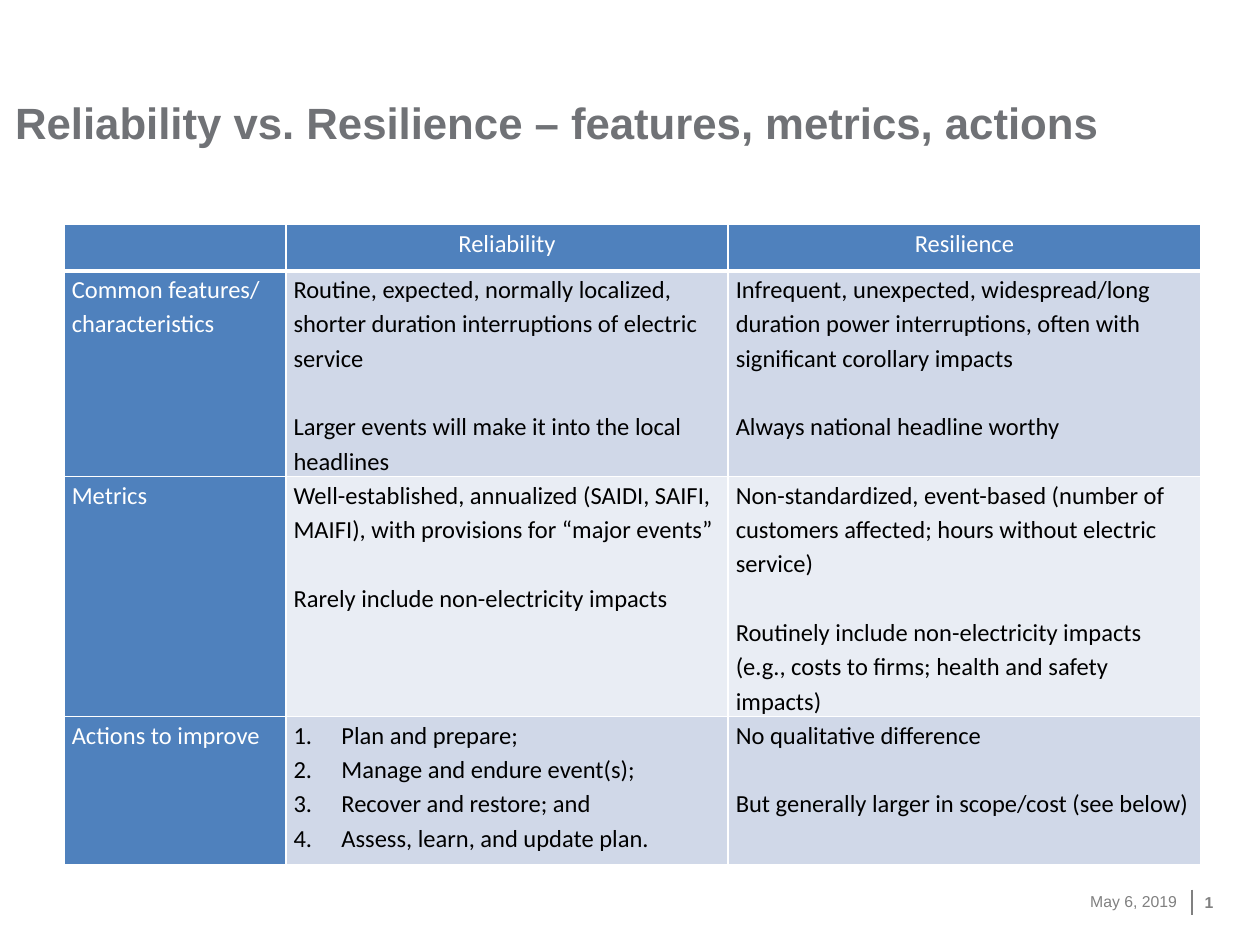
from lxml.etree import SubElement
from pptx import Presentation
from pptx.dml.color import RGBColor
from pptx.enum.shapes import MSO_CONNECTOR as Connector
from pptx.enum.text import MSO_ANCHOR as Anchor, PP_ALIGN as Align
from pptx.oxml.ns import qn
from pptx.util import Inches, Pt

COLORS = {"title": "707276", "footer": "808080", "header": "4F81BD",
          "odd": "D0D8E8", "even": "E9EDF4", "white": "FFFFFF", "black": "000000"}
TITLE = "Reliability vs. Resilience – features, metrics, actions"
DATE, NUMBER = "May 6, 2019", "1"
ROWS = [
    [[], ["Reliability"], ["Resilience"]],
    [["Common features/", "characteristics"],
     ["Routine, expected, normally localized, shorter duration interruptions of electric service",
      "Larger events will make it into the local headlines"],
     ["Infrequent, unexpected, widespread/long duration power interruptions, often with "
      "significant corollary impacts",
      "Always national headline worthy"]],
    [["Metrics"],
     ["Well-established, annualized (SAIDI, SAIFI, MAIFI), with provisions for “major events”",
      "Rarely include non-electricity impacts"],
     ["Non-standardized, event-based (number of customers affected; hours without electric service)",
      "Routinely include non-electricity impacts (e.g., costs to firms; health and safety impacts)"]],
    [["Actions to improve"],
     ["Plan and prepare;", "Manage and endure event(s);", "Recover and restore; and",
      "Assess, learn, and update plan."],
     ["No qualitative difference", "But generally larger in scope/cost (see below)"]],
]
NUMBERED_CELL = (3, 1)
COLUMN_WIDTHS = [1.76, 3.51, 3.75]
ROW_HEIGHTS = [0.37, 1.63, 1.9, 1.18]
PARAGRAPH_GAP = 19.6


def rgb(name):
    return RGBColor.from_string(COLORS[name])


def add_span(para, text, size, font, color, bold=False):
    span = para.add_run()
    span.text = text
    span.font.size, span.font.name, span.font.bold = Pt(size), font, bold
    span.font.color.rgb = rgb(color)


def set_frame(frame, anchor, right=0):
    frame.word_wrap = True
    frame.vertical_anchor = anchor
    frame.margin_left = frame.margin_top = frame.margin_bottom = 0
    frame.margin_right = Inches(right)


def add_footer(page, text, place, align, right=0, bold=False):
    box = page.shapes.add_textbox(*map(Inches, place))
    set_frame(box.text_frame, Anchor.MIDDLE, right)
    para = box.text_frame.paragraphs[0]
    para.alignment = align
    add_span(para, text, 9, "Arial", "footer", bold)


def set_borders(cell, bottom):
    props = cell._tc.get_or_add_tcPr()
    for side, width in (("L", 1), ("R", 1), ("T", 1), ("B", bottom)):
        line = SubElement(props, qn(f"a:ln{side}"), w=str(Pt(width)))
        SubElement(SubElement(line, qn("a:solidFill")), qn("a:srgbClr"), val=COLORS["white"])


def number_para(para):
    props = para._p.get_or_add_pPr()
    props.set("marL", str(Inches(0.38)))
    props.set("indent", str(-Inches(0.38)))
    SubElement(props, qn("a:buFont"), typeface="+mj-lt")
    SubElement(props, qn("a:buAutoNum"), type="arabicPeriod")


def fill_cell(cell, texts, row, column):
    is_header = row == 0 or column == 0
    numbered = (row, column) == NUMBERED_CELL
    set_borders(cell, 3 if row == 0 else 1)
    cell.fill.solid()
    cell.fill.fore_color.rgb = rgb("header" if is_header else "odd" if row % 2 else "even")
    cell.margin_left = cell.margin_right = Inches(0.06)
    cell.margin_top = cell.margin_bottom = 0
    frame = cell.text_frame
    for index, text in enumerate(texts):
        para = frame.add_paragraph() if index else frame.paragraphs[0]
        para.line_spacing = 1.15
        para.alignment = Align.CENTER if row == 0 else Align.LEFT
        if index and not is_header and not numbered:
            para.space_before = Pt(PARAGRAPH_GAP)
        if numbered:
            number_para(para)
        add_span(para, text, 14, "Calibri", "white" if is_header else "black")


def add_comparison(page):
    place = (0.51, 1.78, sum(COLUMN_WIDTHS), sum(ROW_HEIGHTS))
    table = page.shapes.add_table(len(ROWS), len(COLUMN_WIDTHS), *map(Inches, place)).table
    table.first_row = table.horz_banding = False
    for column, width in zip(table.columns, COLUMN_WIDTHS):
        column.width = Inches(width)
    for row, height in zip(table.rows, ROW_HEIGHTS):
        row.height = Inches(height)
    for row, cells in enumerate(ROWS):
        for column, texts in enumerate(cells):
            fill_cell(table.cell(row, column), texts, row, column)


def main():
    deck = Presentation()
    deck.slide_width, deck.slide_height = Inches(10), Inches(7.5)
    page = deck.slides.add_slide(deck.slide_layouts[5])

    title = page.shapes.title
    title.left, title.top, title.width, title.height = map(Inches, (0.12, 0.3, 9.06, 0.88))
    set_frame(title.text_frame, Anchor.BOTTOM)
    para = title.text_frame.paragraphs[0]
    para.alignment = Align.LEFT
    add_span(para, TITLE, 25, "Arial", "title", True)

    add_comparison(page)

    add_footer(page, DATE, (8.03, 6.95, 1.31, 0.4), Align.RIGHT)
    divider = page.shapes.add_connector(
        Connector.STRAIGHT, *map(Inches, (9.46, 7.06, 9.46, 7.26)))
    divider.line.color.rgb = rgb("footer")
    divider.line.width = Pt(1)
    SubElement(divider._element.spPr, qn("a:effectLst"))
    add_footer(page, NUMBER, (9.56, 6.96, 0.25, 0.4), Align.LEFT, 0.1, True)

    deck.save("out.pptx")


if __name__ == "__main__":
    main()
